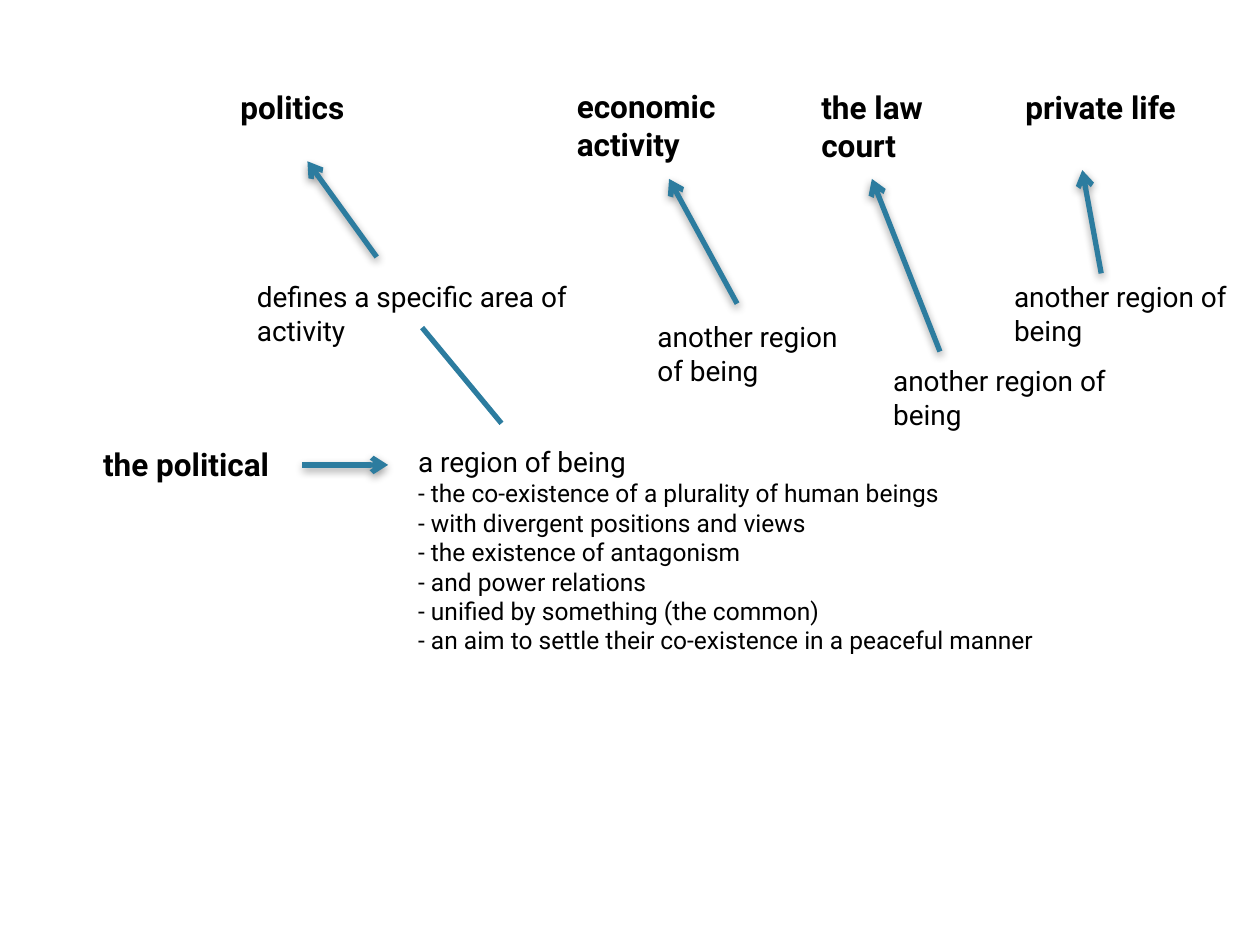
from dataclasses import dataclass

from lxml.etree import SubElement
from pptx import Presentation
from pptx.dml.color import RGBColor
from pptx.enum.shapes import MSO_CONNECTOR as Connector
from pptx.enum.text import MSO_AUTO_SIZE as AutoSize
from pptx.oxml.ns import qn
from pptx.slide import Slide
from pptx.util import Inches, Pt

COLORS = {"text": "000000", "arrow": "2C7C9F", "shadow": "000000"}
FONT = "Roboto"
CELL = Inches(0.1)
COLUMNS, ROWS = 100, 75
TERM_SIZE, REGION_SIZE, DETAIL_SIZE = 18, 16, 14


@dataclass(frozen=True)
class Label:
    column: float
    row: float
    columns: float
    rows: float
    lines: tuple[str, ...]
    size: int = REGION_SIZE
    bold: bool = False


@dataclass(frozen=True)
class Link:
    start: tuple[float, float]
    end: tuple[float, float]
    pointed: bool = True


def term(column: float, row: float, columns: float, rows: float, wording: str) -> Label:
    return Label(column, row, columns, rows, (wording,), TERM_SIZE, True)


def other_region(column: float, row: float, columns: float) -> Label:
    return Label(column, row, columns, 6.4, ("another region of being",))


LABELS = (
    term(7.2, 34.8, 17.7, 4, "the political"),
    Label(32.2, 34.8, 55.2, 17.8, (
        "a region of being",
        "- the co-existence of a plurality of human beings",
        "- with divergent positions and views",
        "- the existence of antagonism",
        "- and power relations",
        "- unified by something (the common)",
        "- an aim to settle their co-existence in a peaceful manner",
    )),
    term(18.1, 6.5, 11.8, 4, "politics"),
    Label(19.4, 21.7, 29.9, 6.4, ("defines a specific area of activity",)),
    term(44.8, 6.4, 14.3, 7.1, "economic activity"),
    term(64.2, 6.5, 11.8, 7.1, "the law court"),
    term(80.4, 6.5, 13.9, 7.1, "private life"),
    other_region(51.2, 24.9, 18.6),
    other_region(69.9, 28.4, 19.6),
    other_region(79.5, 21.7, 19.6),
)

LINKS = (
    Link((24, 36.9), (30.8, 36.9)),
    Link((29.9, 20.4), (24.4, 12.8)),
    Link((39.8, 33.6), (33.5, 26), pointed=False),
    Link((58.5, 24.1), (53.1, 14.2)),
    Link((74.6, 27.9), (69.2, 14.2)),
    Link((87.4, 21.7), (85.9, 13.5)),
)


def cells(*counts: float) -> list[int]:
    return [round(count * CELL) for count in counts]


def draw_label(slide: Slide, label: Label) -> None:
    box = slide.shapes.add_textbox(
        *cells(label.column, label.row, label.columns, label.rows)
    )
    frame = box.text_frame
    frame.text = "\n".join(label.lines)
    frame.word_wrap = True
    frame.auto_size = AutoSize.SHAPE_TO_FIT_TEXT
    for index, paragraph in enumerate(frame.paragraphs):
        font = paragraph.runs[0].font
        font.name = FONT
        font.size = Pt(DETAIL_SIZE if index else label.size)
        font.bold = label.bold
        font.color.rgb = RGBColor.from_string(COLORS["text"])


def draw_link(slide: Slide, link: Link) -> None:
    connector = slide.shapes.add_connector(
        Connector.STRAIGHT, *cells(*link.start, *link.end)
    )
    connector.line.color.rgb = RGBColor.from_string(COLORS["arrow"])
    connector.line.width = Pt(3)
    properties = connector._element.spPr
    effects = SubElement(properties, qn("a:effectLst"))
    if link.pointed:
        SubElement(properties.find(qn("a:ln")), qn("a:tailEnd"), type="arrow")
        shadow = SubElement(
            effects, qn("a:outerShdw"), blurRad=str(Pt(5)), dist=str(Pt(2)),
            dir=str(90 * 60000), rotWithShape="0",
        )
        tint = SubElement(shadow, qn("a:srgbClr"), val=COLORS["shadow"])
        SubElement(tint, qn("a:alpha"), val="40000")


def main() -> None:
    deck = Presentation()
    deck.slide_width, deck.slide_height = cells(COLUMNS, ROWS)
    slide = deck.slides.add_slide(deck.slide_layouts[6])
    for label in LABELS:
        draw_label(slide, label)
    for link in LINKS:
        draw_link(slide, link)
    deck.save("out.pptx")


if __name__ == "__main__":
    main()
